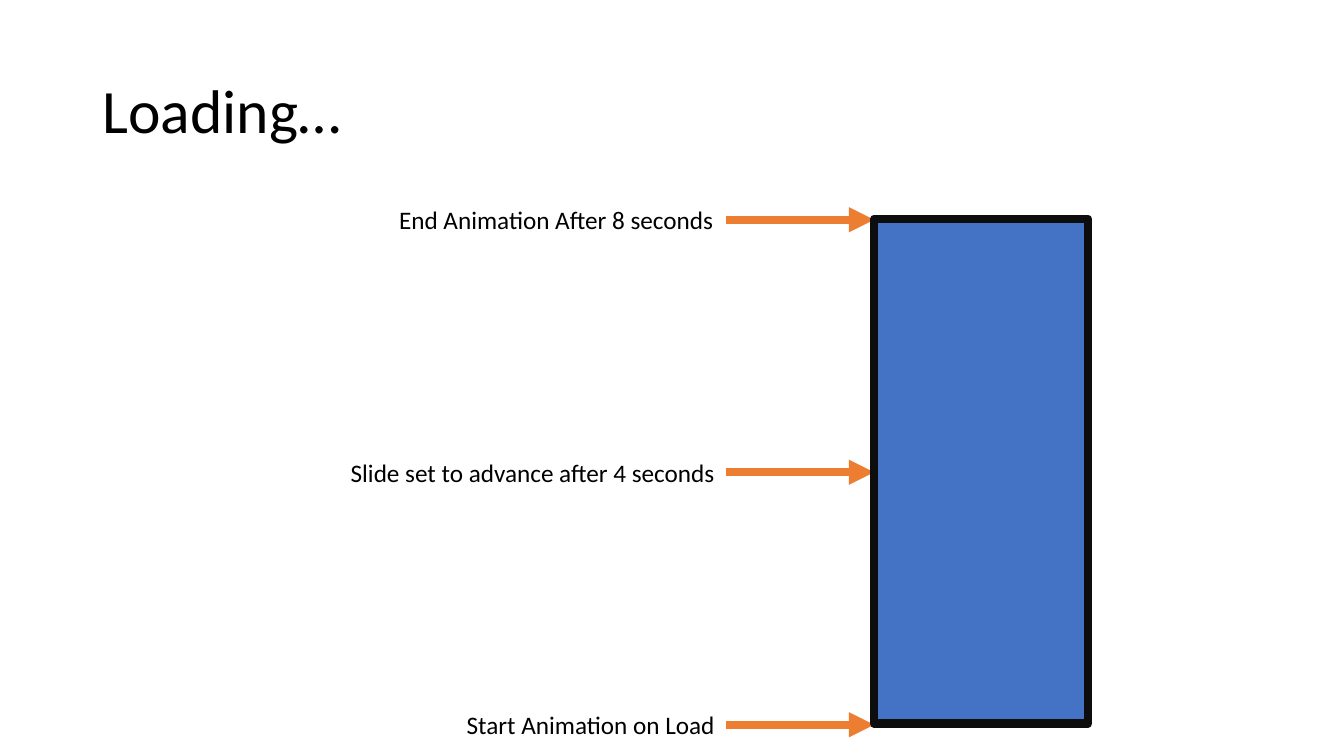
from pptx import Presentation
from pptx.dml.color import RGBColor
from pptx.enum.shapes import MSO_CONNECTOR, MSO_SHAPE
from pptx.enum.text import MSO_ANCHOR, MSO_AUTO_SIZE
from pptx.oxml.ns import qn
from pptx.util import Inches, Pt
from lxml.etree import SubElement


def rgb(value):
    return RGBColor.from_string(value)


def add_text(s, text, left, top, width, height, size):
    sp = s.shapes.add_textbox(Inches(left), Inches(top), Inches(width), Inches(height))
    tf = sp.text_frame
    r = tf.paragraphs[0].add_run()
    r.text = text
    r.font.size = Pt(size)
    r.font.name = "Calibri"
    r.font.color.rgb = rgb("000000")
    return tf


prs = Presentation()
prs.slide_width = Inches(13.33)
prs.slide_height = Inches(7.5)
s = prs.slides.add_slide(prs.slide_layouts[6])

BAR_LEFT, BAR_TOP, BAR_WIDTH, BAR_HEIGHT = 8.67, 2.18, 2.12, 5.01
ARROW_LEFT = 7.2

tf = add_text(s, "Loading…", 0.92, 0.4, 11.5, 1.45, 44)
tf.word_wrap = True
tf.vertical_anchor = MSO_ANCHOR.MIDDLE
tf.paragraphs[0].line_spacing = 0.9

# Loading bar
bar = s.shapes.add_shape(MSO_SHAPE.RECTANGLE, Inches(BAR_LEFT), Inches(BAR_TOP),
                         Inches(BAR_WIDTH), Inches(BAR_HEIGHT))
bar.shadow.inherit = False
bar.fill.solid()
bar.fill.fore_color.rgb = rgb("4472C4")
bar.line.color.rgb = rgb("325491")
bar.line.width = Pt(1)

# Labelled arrows at the top, middle and bottom of the bar
marks = [
    ("End Animation After 8 seconds", 3.86, 3.36, 0),
    ("Slide set to advance after 4 seconds", 3.38, 3.86, 0.5),
    ("Start Animation on Load", 4.53, 2.69, 1),
]
for label, left, width, share in marks:
    y = BAR_TOP + share * BAR_HEIGHT
    arrow = s.shapes.add_connector(MSO_CONNECTOR.STRAIGHT, Inches(ARROW_LEFT), Inches(y),
                                   Inches(BAR_LEFT), Inches(y))
    if share == 0.5:
        arrow.end_connect(bar, 1)
    arrow.line.color.rgb = rgb("ED7D31")
    arrow.line.width = Pt(6)
    SubElement(arrow.line._get_or_add_ln(), qn("a:tailEnd"), type="triangle")
    SubElement(arrow._element.spPr, qn("a:effectLst"))

    tf = add_text(s, label, left, y - 0.2, width, 0.4, 18)
    tf.word_wrap = False
    tf.auto_size = MSO_AUTO_SIZE.SHAPE_TO_FIT_TEXT

# Frame over the bar and the arrow tips
frame = s.shapes.add_shape(MSO_SHAPE.RECTANGLE, Inches(BAR_LEFT), Inches(BAR_TOP - 0.01),
                           Inches(BAR_WIDTH), Inches(BAR_HEIGHT))
frame.shadow.inherit = False
frame.fill.background()
frame.line.color.rgb = rgb("0D0D0D")
frame.line.width = Pt(6)

prs.save("out.pptx")
